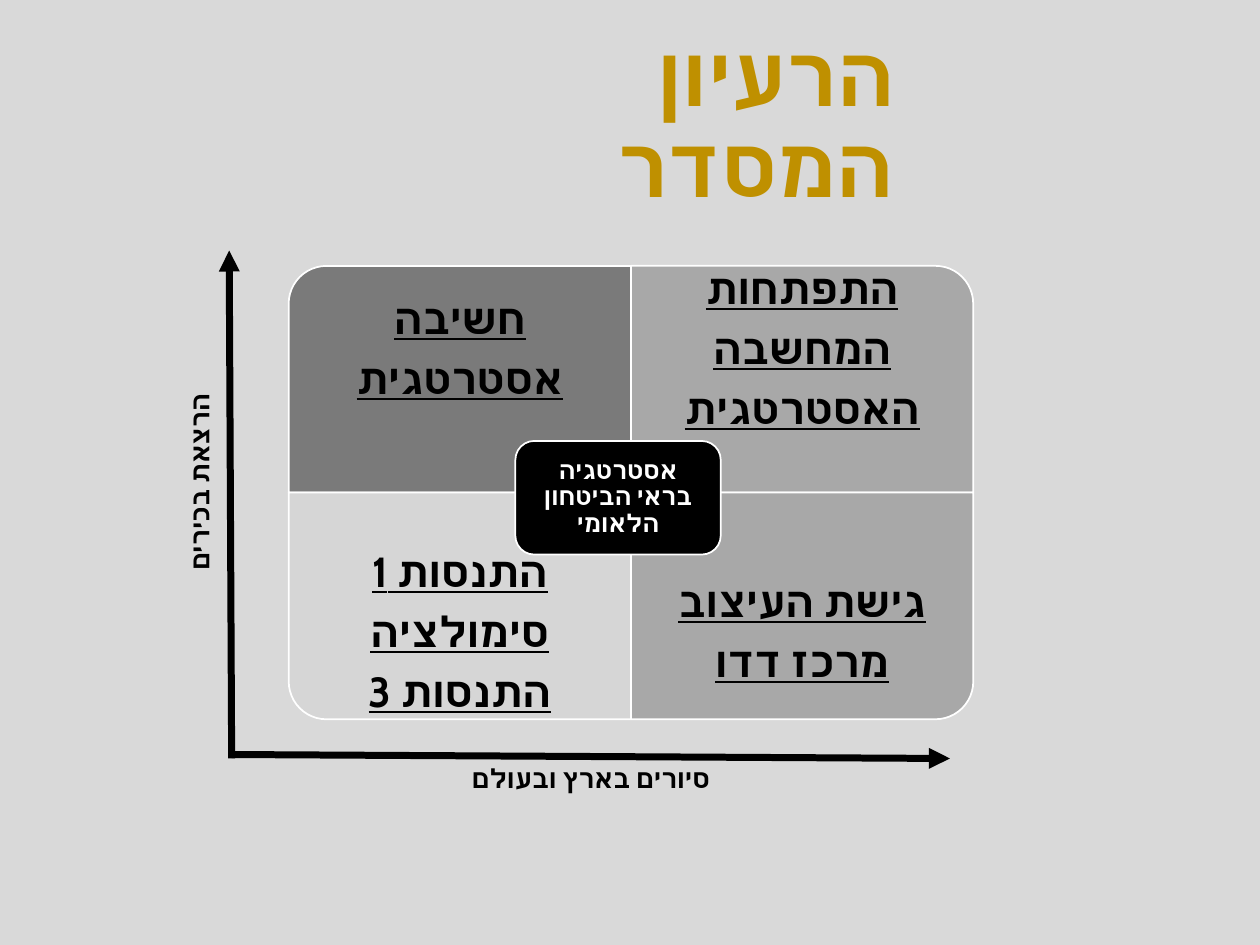
from lxml import etree
from pptx import Presentation
from pptx import util as u
from pptx.dml.color import RGBColor
from pptx.enum import shapes, text
from pptx.oxml.ns import qn

Cm, Pt = u.Cm, u.Pt

THEME = {
    "bg": "D9D9D9", "gold": "BF9000", "black": "000000", "white": "FFFFFF",
    "dark": "7A7A7A", "mid": "A8A8A8", "light": "D6D6D6",
    "title_font": "Roboto", "body_font": "Cabin",
    "title": 48, "topic": 24, "axis": 15, "center": 14,
}


def rgb(name):
    return RGBColor.from_string(THEME[name])


def write(sp, lines, size, color, align, font="body_font", inset=(0.18, 0.1),
          after=0, underline=None):
    """Fill a shape with bold right-to-left paragraphs."""
    tf = sp.text_frame
    tf.word_wrap = True
    tf.auto_size = text.MSO_AUTO_SIZE.NONE
    tf.vertical_anchor = text.MSO_ANCHOR.MIDDLE
    tf.margin_left = tf.margin_right = Cm(inset[0])
    tf.margin_top = tf.margin_bottom = Cm(inset[1])
    runs = []
    for i, line in enumerate(lines):
        p = tf.paragraphs[0] if i == 0 else tf.add_paragraph()
        p._p.get_or_add_pPr().set("rtl", "1")
        p.alignment = align
        p.line_spacing = 0.9
        p.space_before = Pt(0)
        p.space_after = Pt(THEME[size] * after)
        r = p.add_run()
        r.text = line
        r.font.size = Pt(THEME[size])
        r.font.bold = True
        r.font.underline = underline
        r.font.color.rgb = rgb(color)
        r.font.name = THEME[font]
        # Hebrew takes the complex-script font
        cs = etree.SubElement(r._r.get_or_add_rPr(), qn("a:cs"))
        cs.set("typeface", THEME[font])
        runs.append(r)
    return runs


RIGHT, CENTER = text.PP_ALIGN.RIGHT, text.PP_ALIGN.CENTER

prs = Presentation()
prs.slide_width, prs.slide_height = Cm(25.4), Cm(19.05)
s = prs.slides.add_slide(prs.slide_layouts[5])
s.background.fill.solid()
s.background.fill.fore_color.rgb = rgb("bg")

# Title with a thin white outline
title = s.shapes.title
title.left, title.top, title.width, title.height = Cm(7.21), Cm(1.47), Cm(11), Cm(2.08)
r = write(title, ["הרעיון המסדר"], "title", "gold", RIGHT, font="title_font")[0]
ln = etree.Element(qn("a:ln"), w=str(Pt(0.75)))
fill = etree.SubElement(ln, qn("a:solidFill"))
etree.SubElement(fill, qn("a:srgbClr"), val=THEME["white"])
r._r.get_or_add_rPr().insert(0, ln)

# Matrix: column, row, rotation of the rounded corner, fill, topics
quadrants = [
    (0, 0, 270, "dark", ["חשיבה", "אסטרטגית"]),
    (1, 0, 0, "mid", ["התפתחות", "המחשבה", "האסטרטגית"]),
    (0, 1, 180, "light", ["התנסות 1", "סימולציה", "התנסות 3"]),
    (1, 1, 90, "mid", ["גישת העיצוב", "מרכז דדו"]),
]
left, top, cell_w, cell_h = 5.82, 5.36, 6.9, 4.57
text_h = cell_h * 0.75
for col, row, turn, color, topics in quadrants:
    x, y = left + col * cell_w, top + row * cell_h
    # A quarter turn swaps width and height around the same centre
    w, h = (cell_h, cell_w) if turn % 180 else (cell_w, cell_h)
    sp = s.shapes.add_shape(shapes.MSO_SHAPE.ROUND_1_RECTANGLE,
                            Cm(x + (cell_w - w) / 2), Cm(y + (cell_h - h) / 2), Cm(w), Cm(h))
    sp.rotation = turn
    sp.shadow.inherit = False
    sp.fill.solid()
    sp.fill.fore_color.rgb = rgb(color)
    sp.line.color.rgb = rgb("white")
    sp.line.width = Pt(1)
    box = s.shapes.add_textbox(Cm(x), Cm(y + row * (cell_h - text_h)), Cm(cell_w), Cm(text_h))
    write(box, topics, "topic", "black", CENTER, inset=(0.48, 0.48), after=0.35, underline=True)

# Centre of the matrix
sp = s.shapes.add_shape(shapes.MSO_SHAPE.ROUNDED_RECTANGLE, Cm(10.39), Cm(8.89), Cm(4.14), Cm(2.29))
sp.shadow.inherit = False
sp.fill.solid()
sp.fill.fore_color.rgb = rgb("black")
sp.line.color.rgb = rgb("white")
sp.line.width = Pt(1)
write(sp, ["אסטרטגיה בראי הביטחון הלאומי"], "center", "white", CENTER, inset=(0.15, 0.15), after=0.35)

# Axes
for x1, y1, x2, y2 in [(4.67, 15.21, 19.15, 15.29), (4.67, 15.29, 4.62, 5.05)]:
    axis = s.shapes.add_connector(shapes.MSO_CONNECTOR.STRAIGHT, Cm(x1), Cm(y1), Cm(x2), Cm(y2))
    axis.line.color.rgb = rgb("black")
    axis.line.width = Pt(4)
    etree.SubElement(axis.line._get_or_add_ln(), qn("a:tailEnd"), type="triangle")
    etree.SubElement(axis._element.spPr, qn("a:effectLst"))

# Axis labels
for label, x, y, w, turn in [("סיורים בארץ ובעולם", 7.82, 15.34, 6.68, 0),
                             ("הרצאת בכירים", 1.88, 9.55, 4.34, 270)]:
    box = s.shapes.add_textbox(Cm(x), Cm(y), Cm(w), Cm(0.76))
    box.rotation = turn
    write(box, [label], "axis", "black", RIGHT)

prs.save("out.pptx")
